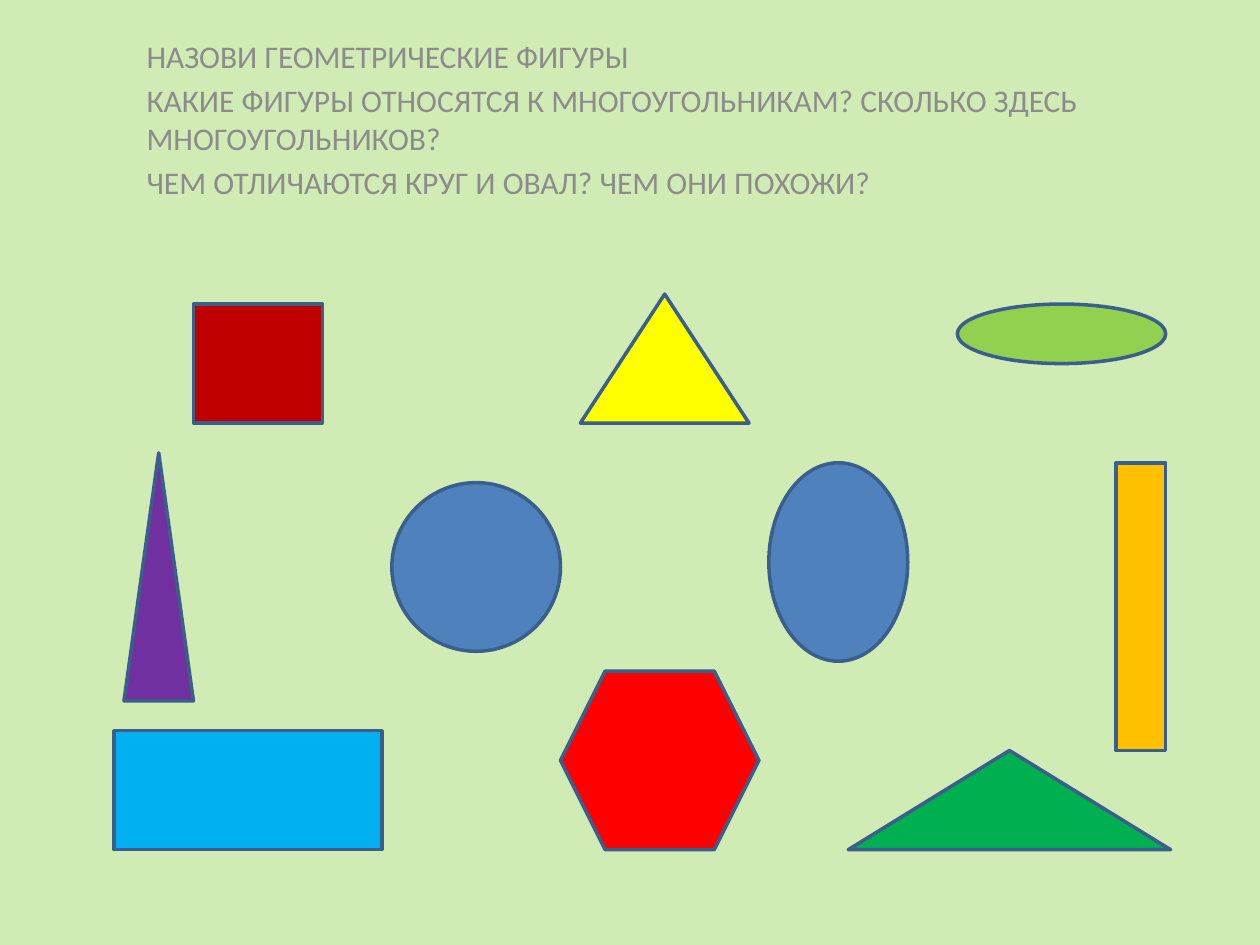
import pptx
import pptx.dml.color
import pptx.enum.shapes
import pptx.enum.text
import pptx.util

Cm = pptx.util.Cm
Pt = pptx.util.Pt
RGBColor = pptx.dml.color.RGBColor
Preset = pptx.enum.shapes.MSO_SHAPE

PALE_GREEN = RGBColor(0xD1, 0xEB, 0xB5)
GRAY = RGBColor(0x8C, 0x8C, 0x8C)
OUTLINE = RGBColor(0x3A, 0x5F, 0x8C)
DARK_RED = RGBColor(0xC0, 0x00, 0x00)
SKY = RGBColor(0x00, 0xB0, 0xF0)
AMBER = RGBColor(0xFF, 0xC0, 0x00)
BLUE = RGBColor(0x4F, 0x81, 0xBD)
LIME = RGBColor(0x92, 0xD0, 0x50)
YELLOW = RGBColor(0xFF, 0xFF, 0x00)
GREEN = RGBColor(0x00, 0xB0, 0x50)
RED = RGBColor(0xFF, 0x00, 0x00)
PURPLE = RGBColor(0x70, 0x30, 0xA0)

QUESTIONS = [
    "НАЗОВИ ГЕОМЕТРИЧЕСКИЕ ФИГУРЫ",
    "КАКИЕ ФИГУРЫ ОТНОСЯТСЯ К МНОГОУГОЛЬНИКАМ? СКОЛЬКО ЗДЕСЬ МНОГОУГОЛЬНИКОВ?",
    "ЧЕМ ОТЛИЧАЮТСЯ КРУГ И ОВАЛ? ЧЕМ ОНИ ПОХОЖИ?",
]

# Preset, fill, then left, top, width, height in cm
FIGURES = [
    (Preset.RECTANGLE, DARK_RED, 3.9, 6.13, 2.6, 2.4),
    (Preset.RECTANGLE, SKY, 2.3, 14.73, 5.4, 2.4),
    (Preset.RECTANGLE, AMBER, 22.5, 9.33, 1, 5.8),
    (Preset.OVAL, BLUE, 7.9, 9.73, 3.4, 3.4),
    (Preset.OVAL, BLUE, 15.5, 9.33, 2.8, 4),
    (Preset.OVAL, LIME, 19.3, 6.13, 4.2, 1.2),
    (Preset.ISOSCELES_TRIANGLE, YELLOW, 11.7, 5.93, 3.4, 2.6),
    (Preset.ISOSCELES_TRIANGLE, GREEN, 17.1, 15.13, 6.5, 2),
    (Preset.HEXAGON, RED, 11.3, 13.53, 4, 3.6),
    (Preset.ISOSCELES_TRIANGLE, PURPLE, 2.5, 9.13, 1.4, 5),
]


class FigureSlide:
    font_name = "Calibri"
    font_size = Pt(18)
    line_width = Pt(2)

    def __init__(self, slide):
        self.slide = slide

    def background(self, color):
        fill = self.slide.background.fill
        fill.solid()
        fill.fore_color.rgb = color

    def questions(self, lines, left, top, width, height):
        body = self.slide.placeholders[1]
        body.left, body.top = Cm(left), Cm(top)
        body.width, body.height = Cm(width), Cm(height)
        frame = body.text_frame
        frame.text = "\n".join(lines)
        frame.word_wrap = True
        frame.vertical_anchor = pptx.enum.text.MSO_ANCHOR.BOTTOM
        for paragraph in frame.paragraphs:
            for run in paragraph.runs:
                run.font.name = self.font_name
                run.font.size = self.font_size
                run.font.color.rgb = GRAY

    def figure(self, preset, color, left, top, width, height):
        shape = self.slide.shapes.add_shape(
            preset, Cm(left), Cm(top), Cm(width), Cm(height))
        shape.shadow.inherit = False
        shape.fill.solid()
        shape.fill.fore_color.rgb = color
        shape.line.color.rgb = OUTLINE
        shape.line.width = self.line_width


def main():
    deck = pptx.Presentation()
    deck.slide_width, deck.slide_height = Cm(25.4), Cm(19.05)

    # The section layout holds the body text; its title is not needed
    slide = deck.slides.add_slide(deck.slide_layouts[2])
    title = slide.shapes.title.element
    title.getparent().remove(title)

    page = FigureSlide(slide)
    page.background(PALE_GREEN)

    # Questions for the children
    page.questions(QUESTIONS, 2.7, 0, 21, 4.17)

    # Geometric figures
    for figure in FIGURES:
        page.figure(*figure)

    deck.save("out.pptx")


if __name__ == "__main__":
    main()
